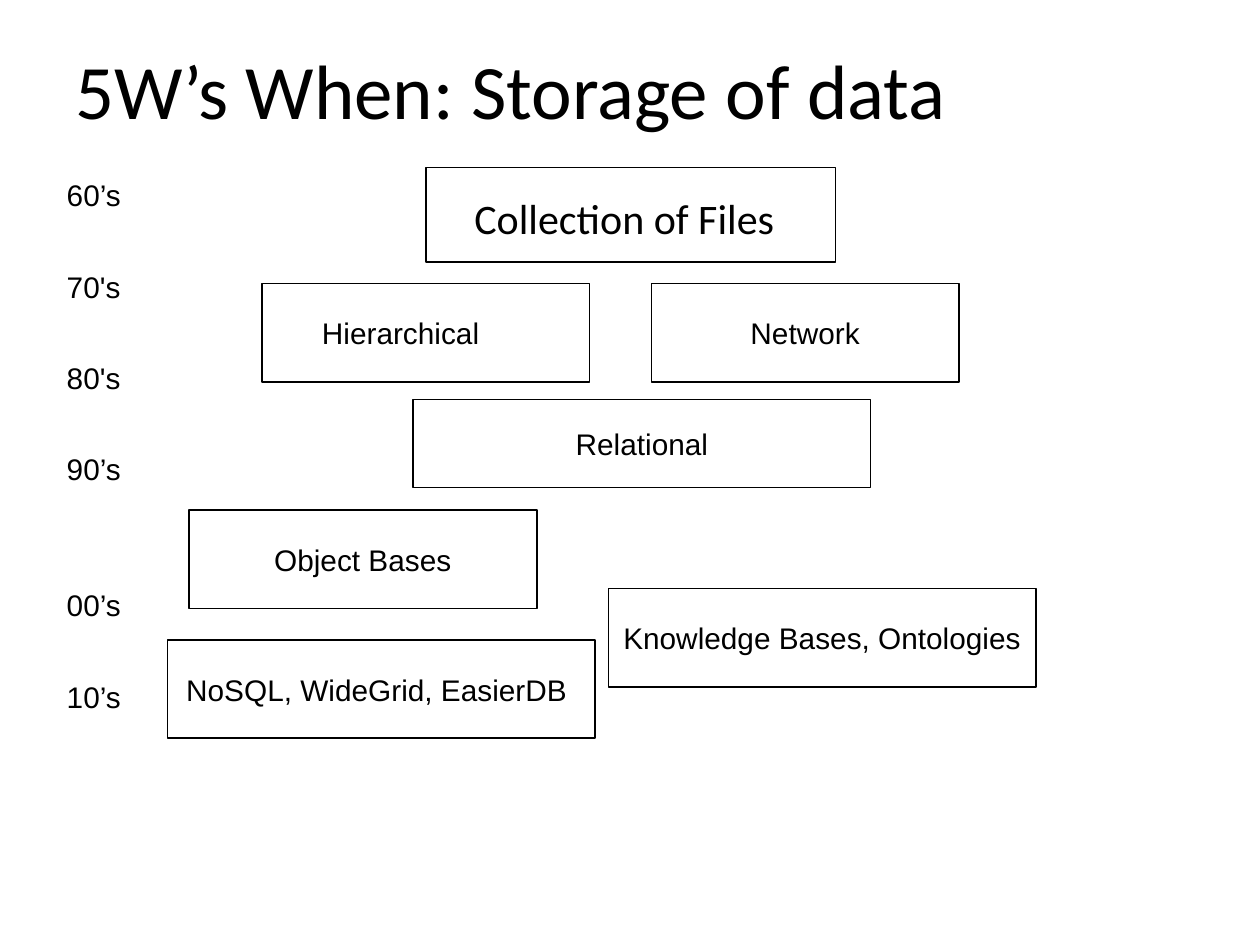
from pptx import Presentation
from pptx.dml.color import RGBColor
from pptx.enum.shapes import MSO_SHAPE
from pptx.enum.text import MSO_ANCHOR, PP_ALIGN
from pptx.util import Inches, Pt

BLACK = RGBColor(0, 0, 0)

DECADES = [("60’s", 0), ("70's", 34), ("80's", 34), ("90’s", 34), ("00’s", 59.7), ("10’s", 34)]

MODELS = [
    ("Hierarchical", 2.08, 2.25, 2.6, 0.78, 0.49),
    ("Network", 5.17, 2.25, 2.44, 0.78, 0.09),
    ("Relational", 3.28, 3.17, 3.63, 0.7, 0.09),
    ("Object Bases", 1.5, 4.05, 2.76, 0.78, 0.09),
    ("Knowledge Bases, Ontologies", 4.83, 4.67, 3.39, 0.78, 0.09),
    ("NoSQL, WideGrid, EasierDB", 1.33, 5.08, 3.39, 0.78, 0.16),
]


def write(para, text, size=17, font="Arial", align=PP_ALIGN.LEFT):
    """Put formatted text in a paragraph."""
    para.alignment = align
    span = para.add_run()
    span.text = text
    span.font.size = Pt(size)
    span.font.name = font
    span.font.color.rgb = BLACK


def set_frame(frame, wrap, anchor, sides, ends, right=None):
    """Set the wrapping, anchor and insets of a text frame."""
    frame.word_wrap = wrap
    frame.vertical_anchor = anchor
    frame.margin_left = Inches(sides)
    frame.margin_right = Inches(sides if right is None else right)
    frame.margin_top = frame.margin_bottom = Inches(ends)


def add_title(page, text):
    """Place and fill the title placeholder."""
    title = page.shapes.title
    title.left, title.top = Inches(0.5), Inches(0.08)
    title.width, title.height = Inches(9), Inches(1.25)
    set_frame(title.text_frame, True, MSO_ANCHOR.MIDDLE, 0.1, 0.05)
    write(title.text_frame.paragraphs[0], text, size=44, font="Calibri")


def add_box(page, left, top, width, height, line=1):
    """Draw an unfilled rectangle with a black outline."""
    box = page.shapes.add_shape(
        MSO_SHAPE.RECTANGLE, Inches(left), Inches(top), Inches(width), Inches(height)
    )
    box.shadow.inherit = False
    box.fill.background()
    box.line.color.rgb = BLACK
    box.line.width = Pt(line)
    return box


def add_model(page, text, left, top, width, height, right):
    """Draw a box naming one storage model."""
    frame = add_box(page, left, top, width, height).text_frame
    set_frame(frame, False, MSO_ANCHOR.MIDDLE, 0.09, 0.05, right=right)
    write(frame.paragraphs[0], text, align=PP_ALIGN.CENTER)


def add_text_frame(page, left, top, width, height, wrap):
    """Add a text box and return its frame."""
    box = page.shapes.add_textbox(Inches(left), Inches(top), Inches(width), Inches(height))
    set_frame(box.text_frame, wrap, MSO_ANCHOR.TOP, 0.07, 0.03)
    return box.text_frame


def add_decades(page):
    """List the decades down the left side."""
    frame = add_text_frame(page, 0.46, 1.41, 1.03, 5.25, True)
    for index, (decade, gap) in enumerate(DECADES):
        para = frame.add_paragraph() if index else frame.paragraphs[0]
        para.line_spacing = 0.89
        para.space_before = Pt(gap)
        write(para, decade)


def main():
    """Build and save the slide."""
    deck = Presentation()
    deck.slide_width, deck.slide_height = Inches(10), Inches(7.5)
    page = deck.slides.add_slide(deck.slide_layouts[5])
    add_title(page, "5W’s When: Storage of data")
    add_decades(page)
    add_box(page, 3.38, 1.33, 3.25, 0.75, line=0.75)
    files = add_text_frame(page, 3.65, 1.5, 2.61, 0.45, False)
    write(files.paragraphs[0], "Collection of Files", size=24, font="Calibri", align=PP_ALIGN.CENTER)
    for model in MODELS:
        add_model(page, *model)
    deck.save("out.pptx")


if __name__ == "__main__":
    main()
